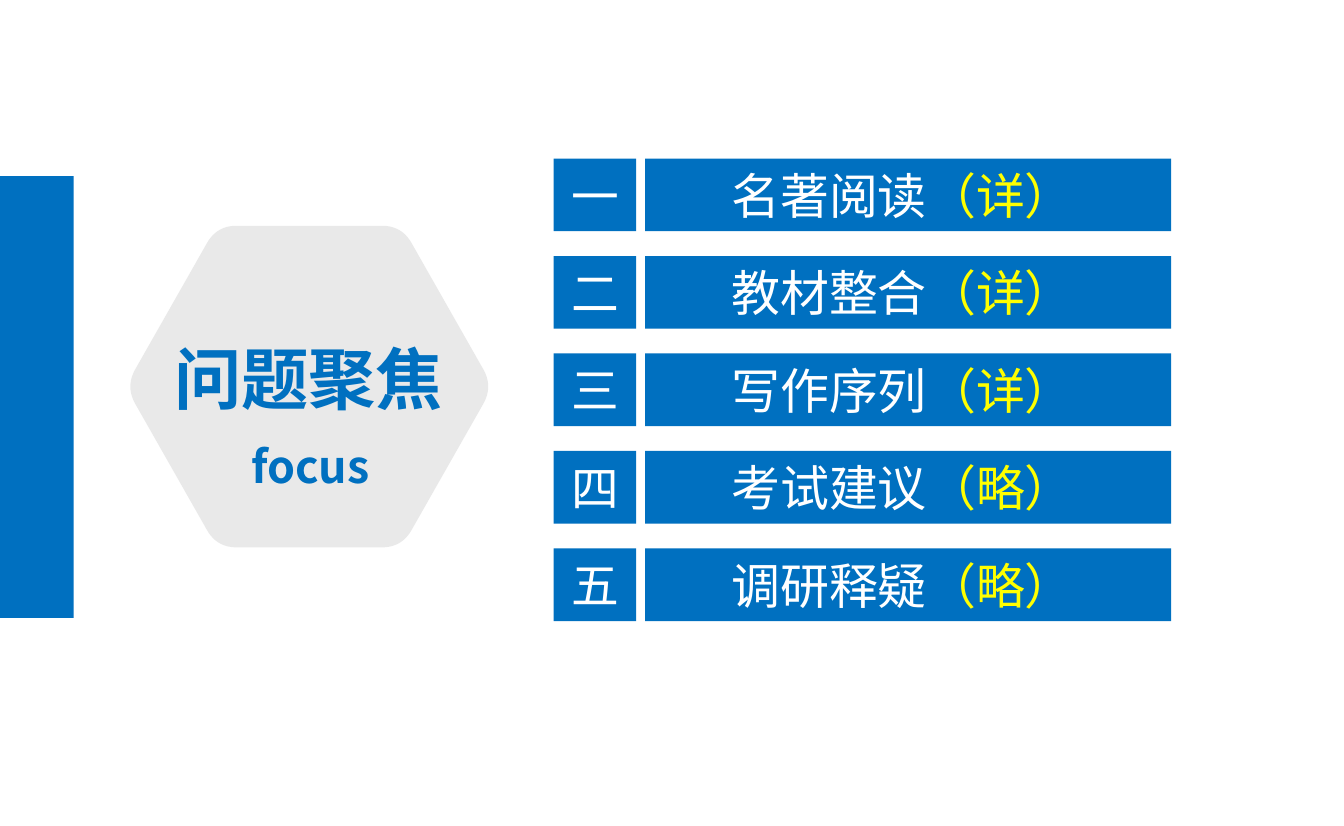
import dataclasses

import lxml.etree
import pptx
import pptx.dml.color
import pptx.enum.shapes
import pptx.enum.text
import pptx.oxml.ns
import pptx.util

PX = 9144  # EMU in one px, 100 px to the inch
ALIGN = pptx.enum.text.PP_ALIGN
ANCHOR = pptx.enum.text.MSO_ANCHOR
qn = pptx.oxml.ns.qn


@dataclasses.dataclass(frozen=True)
class Theme:
    font: str = "Noto Sans CJK SC"
    blue: str = "0070C0"
    white: str = "FFFFFF"
    yellow: str = "FFFF00"
    grey: str = "D9D9D9"
    title_size: float = 44
    subtitle_size: float = 29.3
    number_size: float = 31.2
    topic_size: float = 32


THEME = Theme()

TOPICS = [
    ("一", "名著阅读", "（详） "),
    ("二", "教材整合", "（详） "),
    ("三", "写作序列", "（详） "),
    ("四", "考试建议", "（略） "),
    ("五", "调研释疑", "（略） "),
]
FIRST_TOP, ROW_PITCH, ROW_HEIGHT = 144, 88.5, 66
NUMBER_LEFT, NUMBER_WIDTH = 503, 75
TOPIC_LEFT, TOPIC_WIDTH = 586, 478

HEXAGON = [(197, 205), (365, 205), (448, 351), (365, 497), (197, 497), (114, 351)]
CORNER_CUT, CORNER_STEPS = 18, 12


def emu(*lengths):
    return [pptx.util.Emu(round(length * PX)) for length in lengths]


def rgb(colour):
    return pptx.dml.color.RGBColor.from_string(colour)


def paint(shape, colour):
    shape.shadow.inherit = False
    shape.fill.solid()
    shape.fill.fore_color.rgb = rgb(colour)
    shape.line.fill.background()


def write(frame, pieces, size, bold=False, align=ALIGN.CENTER):
    """Write (text, colour) pieces as the runs of one paragraph."""
    paragraph = frame.paragraphs[0]
    paragraph.alignment = align
    for text, colour in pieces:
        run = paragraph.add_run()
        run.text = text
        run.font.size = pptx.util.Pt(size)
        run.font.bold = bold
        run.font.color.rgb = rgb(colour)
        run.font.name = THEME.font
        east_asian = lxml.etree.SubElement(run._r.get_or_add_rPr(), qn("a:ea"))
        east_asian.set("typeface", THEME.font)


def add_block(slide, left, top, width, height):
    block = slide.shapes.add_shape(
        pptx.enum.shapes.MSO_SHAPE.RECTANGLE, *emu(left, top, width, height))
    paint(block, THEME.blue)
    return block


def add_label_block(slide, left, top, width, pieces, size):
    frame = add_block(slide, left, top, width, ROW_HEIGHT).text_frame
    frame.word_wrap = True
    frame.vertical_anchor = ANCHOR.MIDDLE
    write(frame, pieces, size)


def add_heading(slide, left, top, width, height, text, size, align, wrap):
    box = slide.shapes.add_textbox(*emu(left, top, width, height))
    box.text_frame.word_wrap = wrap
    write(box.text_frame, [(text, THEME.blue)], size, True, align)
    return box.text_frame


def towards(start, end, distance):
    dx, dy = end[0] - start[0], end[1] - start[1]
    share = distance / (dx * dx + dy * dy) ** 0.5
    return start[0] + dx * share, start[1] + dy * share


def rounded_outline(corners):
    """Replace each corner by points on a quadratic curve."""
    points = []
    for i, corner in enumerate(corners):
        begin = towards(corner, corners[i - 1], CORNER_CUT)
        end = towards(corner, corners[(i + 1) % len(corners)], CORNER_CUT)
        for step in range(CORNER_STEPS + 1):
            t = step / CORNER_STEPS
            points.append(tuple(
                (1 - t) ** 2 * a + 2 * t * (1 - t) * b + t * t * c
                for a, b, c in zip(begin, corner, end)))
    return points


def add_hexagon(slide):
    points = [emu(*point) for point in rounded_outline(HEXAGON)]
    builder = slide.shapes.build_freeform(*points[0])
    builder.add_line_segments(points[1:], close=True)
    hexagon = builder.convert_to_shape()
    paint(hexagon, THEME.grey)
    colour = hexagon._element.spPr.find(qn("a:solidFill")).find(qn("a:srgbClr"))
    lxml.etree.SubElement(colour, qn("a:alpha")).set("val", "56000")


def add_topic_row(slide, index, number, topic, depth):
    top = FIRST_TOP + index * ROW_PITCH
    add_label_block(slide, NUMBER_LEFT, top, NUMBER_WIDTH,
                    [(number, THEME.white)], THEME.number_size)
    add_label_block(slide, TOPIC_LEFT, top, TOPIC_WIDTH,
                    [(topic, THEME.white), (depth, THEME.yellow)], THEME.topic_size)


def main():
    deck = pptx.Presentation()
    deck.slide_width, deck.slide_height = emu(1221, 750)
    slide = deck.slides.add_slide(deck.slide_layouts[6])

    add_block(slide, 0, 160, 67, 401)
    add_hexagon(slide)
    subtitle = add_heading(slide, 209, 393, 158, 59, "focus",
                           THEME.subtitle_size, ALIGN.LEFT, True)
    subtitle.margin_left = emu(19)[0]
    add_heading(slide, 147, 301, 267, 84, "问题聚焦",
                THEME.title_size, ALIGN.CENTER, False)
    for index, topic_row in enumerate(TOPICS):
        add_topic_row(slide, index, *topic_row)

    deck.save("out.pptx")


if __name__ == "__main__":
    main()
